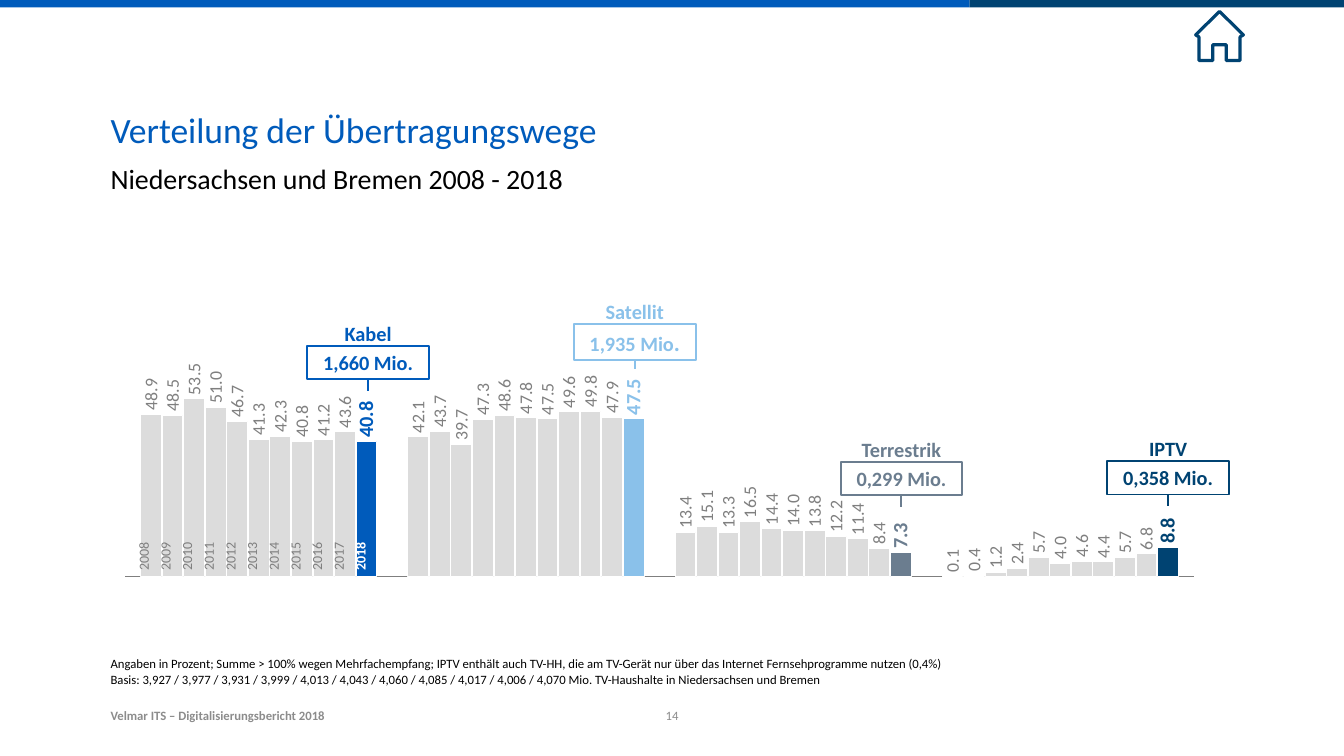
import pptx
import pptx.chart.data
import pptx.dml.color
import pptx.enum.chart
import pptx.enum.shapes
import pptx.enum.text
import pptx.oxml
import pptx.oxml.ns
import pptx.util

Pt = pptx.util.Pt
qn = pptx.oxml.ns.qn
Anchor = pptx.enum.text.MSO_ANCHOR
Align = pptx.enum.text.PP_ALIGN
Shape = pptx.enum.shapes.MSO_SHAPE

COLORS = {
    "blue": "005BBB", "sky": "8AC1EA", "slate": "6B7D8F", "navy": "004372",
    "bar": "DCDCDC", "label": "7F7F7F", "footer": "8C8C8C",
    "black": "000000", "white": "FFFFFF",
}
YEARS = range(2008, 2019)
PATHS = {
    "Kabel": ("blue", [48.9, 48.5, 53.5, 51.0, 46.7, 41.3, 42.3, 40.8, 41.2, 43.6, 40.8]),
    "Satellit": ("sky", [42.1, 43.7, 39.7, 47.3, 48.6, 47.8, 47.5, 49.6, 49.8, 47.9, 47.5]),
    "Terrestrik": ("slate", [13.4, 15.1, 13.3, 16.5, 14.4, 14.0, 13.8, 12.2, 11.4, 8.4, 7.3]),
    "IPTV": ("navy", [0.1, 0.4, 1.2, 2.4, 5.7, 4.0, 4.6, 4.4, 5.7, 6.8, 8.8]),
}
CALLOUTS = [
    ("Kabel", "1,660 Mio", 16, 272.2, 26.6, 9.4),
    ("Satellit", "1,935 Mio", 18, 254.9, 29, 6.5),
    ("Terrestrik", "0,299 Mio", 16, 363.6, 26.6, 9.4),
    ("IPTV", "0,358 Mio", 16, 362.9, 26.6, 9.4),
]
NOTES = [
    "Angaben in Prozent; Summe > 100% wegen Mehrfachempfang; IPTV enthält auch TV-HH, "
    "die am TV-Gerät nur über das Internet Fernsehprogramme nutzen (0,4%)",
    "Basis: 3,927 / 3,977 / 3,931 / 3,999 / 4,013 / 4,043 / 4,060 / 4,085 / 4,017 / 4,006 / "
    "4,070 Mio. TV-Haushalte in Niedersachsen und Bremen",
]
NO_MARGINS = dict.fromkeys(("margin_left", "margin_top", "margin_right", "margin_bottom"), 0)


def rgb(name):
    """Return the named colour."""
    return pptx.dml.color.RGBColor.from_string(COLORS[name])


def apply(target, formats):
    """Set every attribute in formats on target."""
    for attribute, value in formats.items():
        setattr(target, attribute, value)


def style_font(font, size, color, bold=False):
    """Format a font."""
    apply(font, {"name": "Calibri", "size": Pt(size), "bold": bold})
    font.color.rgb = rgb(color)


def write(frame, lines, size, color, bold=False, align=Align.LEFT, anchor=Anchor.TOP, margins=NO_MARGINS):
    """Fill a text frame with one paragraph of lines."""
    apply(frame, {"word_wrap": True, "vertical_anchor": anchor, **margins})
    paragraph = frame.paragraphs[0]
    paragraph.alignment = align
    for index, line in enumerate(lines):
        if index:
            paragraph.add_line_break()
        run = paragraph.add_run()
        run.text = line
        style_font(run.font, size, color, bold)
    return paragraph


def add_text(slide, box, lines, size, color, **options):
    """Place a text box."""
    textbox = slide.shapes.add_textbox(*map(Pt, box))
    write(textbox.text_frame, lines, size, color, **options)


def add_top_bar(slide, box):
    """Draw the two-coloured strip along the top edge."""
    left, top, width, height = box
    split = 763.5
    for start, length, color in ((left, split, "blue"), (left + split, width - split, "navy")):
        strip = slide.shapes.add_shape(Shape.RECTANGLE, Pt(start), Pt(top), Pt(length), Pt(height))
        strip.shadow.inherit = False
        strip.fill.solid()
        strip.fill.fore_color.rgb = rgb(color)
        strip.line.fill.background()


def add_home_icon(slide, box):
    """Draw the outlined house."""
    left, top, width, height = box
    half = [(0.5, 0), (1, 0.48), (0.93, 0.52), (0.93, 1), (0.64, 1), (0.64, 0.68)]
    outline = half + [(1 - x, y) for x, y in reversed(half[1:])]
    points = [(Pt(left + x * width), Pt(top + y * height)) for x, y in outline]
    builder = slide.shapes.build_freeform(*points[0])
    builder.add_line_segments(points[1:], close=True)
    house = builder.convert_to_shape()
    house.shadow.inherit = False
    house.fill.background()
    house.line.width = Pt(2.5)
    house.line.color.rgb = rgb("navy")
    house.line._get_or_add_ln().append(pptx.oxml.parse_xml(
        f"<a:round {pptx.oxml.ns.nsdecls('a')}/>"))


def add_heading(slide, box):
    """Place the title and the subtitle below it."""
    left, top, width, height = box
    title = slide.shapes.title
    apply(title, {"left": Pt(left), "top": Pt(top), "width": Pt(width), "height": Pt(height)})
    write(title.text_frame, ["Verteilung der Übertragungswege"], 28, "blue")
    add_text(slide, (left, top + height, 788.4, 56.9),
             ["Niedersachsen und Bremen 2008 - 2018"], 22, "black")


def fix_plot_area(chart, x, y, width, height):
    """Set the inner plot area as fractions of the chart."""
    plot_area = chart._chartSpace.chart.plotArea
    for layout in plot_area.findall(qn("c:layout")):
        plot_area.remove(layout)
    places = "".join(f'<c:{tag} val="{value}"/>' for tag, value in
                     (("x", x), ("y", y), ("w", width), ("h", height)))
    plot_area.insert(0, pptx.oxml.parse_xml(
        f"<c:layout {pptx.oxml.ns.nsdecls('c')}><c:manualLayout><c:layoutTarget val=\"inner\"/>"
        f'<c:xMode val="edge"/><c:yMode val="edge"/>{places}</c:manualLayout></c:layout>'))


def add_share_chart(slide, box):
    """Draw the yearly shares of each transmission path."""
    kinds = pptx.enum.chart
    shares = pptx.chart.data.CategoryChartData(number_format="#,##0.0")
    shares.categories = [str(number) for number in range(1, len(PATHS) + 1)]
    for index in range(len(YEARS)):
        shares.add_series(f"Series {index + 1}", [values[index] for _, values in PATHS.values()])
    chart = slide.shapes.add_chart(
        kinds.XL_CHART_TYPE.COLUMN_CLUSTERED, *map(Pt, box), shares).chart
    apply(chart, {"has_legend": False, "has_title": False})
    style_font(chart.font, 18, "black")
    hidden = {"has_major_gridlines": False, "major_tick_mark": kinds.XL_TICK_MARK.NONE,
              "minor_tick_mark": kinds.XL_TICK_MARK.NONE,
              "tick_label_position": kinds.XL_TICK_LABEL_POSITION.NONE}
    for axis in (chart.category_axis, chart.value_axis):
        apply(axis, hidden)
    apply(chart.value_axis, {"minimum_scale": 0, "maximum_scale": 100})
    chart.value_axis.format.line.fill.background()
    chart.category_axis.format.line.color.rgb = rgb("label")
    plot = chart.plots[0]
    apply(plot, {"gap_width": 150, "overlap": -4, "vary_by_categories": False})
    outside = kinds.XL_LABEL_POSITION.OUTSIDE_END
    for series in plot.series:
        series.format.fill.solid()
        series.format.fill.fore_color.rgb = rgb("bar")
        series.format.line.color.rgb = rgb("white")
        series.format.line.width = Pt(0.75)
        apply(series.data_labels, {"show_value": True, "position": outside,
                                   "number_format": "#,##0.0", "number_format_is_linked": False})
        style_font(series.data_labels.font, 14, "label")
    latest = plot.series[len(YEARS) - 1]
    for index, (color, _) in enumerate(PATHS.values()):
        point = latest.points[index]
        point.format.fill.solid()
        point.format.fill.fore_color.rgb = rgb(color)
        point.format.line.color.rgb = rgb("white")
        point.format.line.width = Pt(0.75)
        style_font(point.data_label.font, 16, color, True)
        point.data_label.position = outside
    for body in chart._chartSpace.chart.plotArea.iter(qn("a:bodyPr")):
        body.set("rot", "-5400000")
        body.set("vert", "horz")
    fix_plot_area(chart, 0.022, 0.046, 0.955, 0.865)


def add_callouts(slide, left, width, pitch):
    """Place the name, household figure and stem above each latest bar."""
    for index, (name, households, stop_size, top, height, stem) in enumerate(CALLOUTS):
        color = PATHS[name][0]
        start = left + index * pitch
        centre = start + width / 2
        margins = {"margin_left": Pt(7.2), "margin_right": Pt(7.2),
                   "margin_top": Pt(3.6), "margin_bottom": Pt(3.6)}
        add_text(slide, (start, top - 22.8, width, 26.6), [name], 16, color,
                 bold=True, align=Align.CENTER, margins=margins)
        figure = slide.shapes.add_shape(Shape.RECTANGLE, Pt(start), Pt(top), Pt(width), Pt(height))
        figure.shadow.inherit = False
        figure.fill.background()
        paragraph = write(figure.text_frame, [households], 16, color, bold=True,
                          align=Align.CENTER, anchor=Anchor.MIDDLE, margins=margins)
        stop = paragraph.add_run()
        stop.text = "."
        style_font(stop.font, stop_size, color, True)
        pointer = slide.shapes.add_connector(
            pptx.enum.shapes.MSO_CONNECTOR.STRAIGHT,
            Pt(centre), Pt(top + height), Pt(centre), Pt(top + height + stem))
        pointer.begin_connect(figure, 2)
        pointer._element.spPr.append(pptx.oxml.parse_xml(
            f"<a:effectLst {pptx.oxml.ns.nsdecls('a')}/>"))
        for part in (figure, pointer):
            part.line.color.rgb = rgb(color)
            part.line.width = Pt(1.5)


def add_year_table(slide, box):
    """Lay the upright years over the first group of bars."""
    frame = slide.shapes.add_table(1, len(YEARS), *map(Pt, box))
    table = frame.table
    apply(table, {"first_row": False, "horz_banding": False})
    table._tbl.tblPr.find(qn("a:tableStyleId")).text = "{2D5ABB26-0587-4C30-8999-92F81FD0307C}"
    for column, year in enumerate(YEARS):
        table.columns[column].width = Pt(box[2] / len(YEARS))
        cell = table.cell(0, column)
        apply(cell, {"vertical_anchor": Anchor.MIDDLE, **NO_MARGINS})
        cell.fill.background()
        cell._tc.get_or_add_tcPr().set("vert", "vert270")
        paragraph = cell.text_frame.paragraphs[0]
        paragraph.line_spacing = Pt(10)
        run = paragraph.add_run()
        run.text = str(year)
        latest = year == YEARS[-1]
        style_font(run.font, 11, "white" if latest else "label", latest)


def add_footer(slide, box):
    """Place the notes, the report name and the page number."""
    left, top, width, height = box
    add_text(slide, (left, top, width, 22.3), NOTES, 10, "black", anchor=Anchor.BOTTOM)
    add_text(slide, (left, top + height - 16.6, 301, 16.6),
             ["Velmar ITS – Digitalisierungsbericht 2018"], 10, "footer",
             bold=True, anchor=Anchor.BOTTOM)
    add_text(slide, (left + 430.6, top + height - 18, 23, 18), ["14"], 10, "footer",
             align=Align.CENTER, anchor=Anchor.BOTTOM)


def main():
    """Build the slide and save it."""
    deck = pptx.Presentation()
    apply(deck, {"slide_width": Pt(1058.4), "slide_height": Pt(595.4)})
    slide = deck.slides.add_slide(deck.slide_layouts[5])
    add_top_bar(slide, (0, 0, 1058.4, 5.8))
    add_share_chart(slide, (79.2, 178.6, 881.3, 302.4))
    add_heading(slide, (87.1, 85, 884.2, 42.5))
    add_callouts(slide, 242, 95.8, 210)
    add_year_table(slide, (110.2, 406.8, 187.9, 42.5))
    add_footer(slide, (87.1, 518.4, 788.4, 51.1))
    add_home_icon(slide, (941.6, 9, 37.6, 38.6))
    deck.save("out.pptx")


if __name__ == "__main__":
    main()
